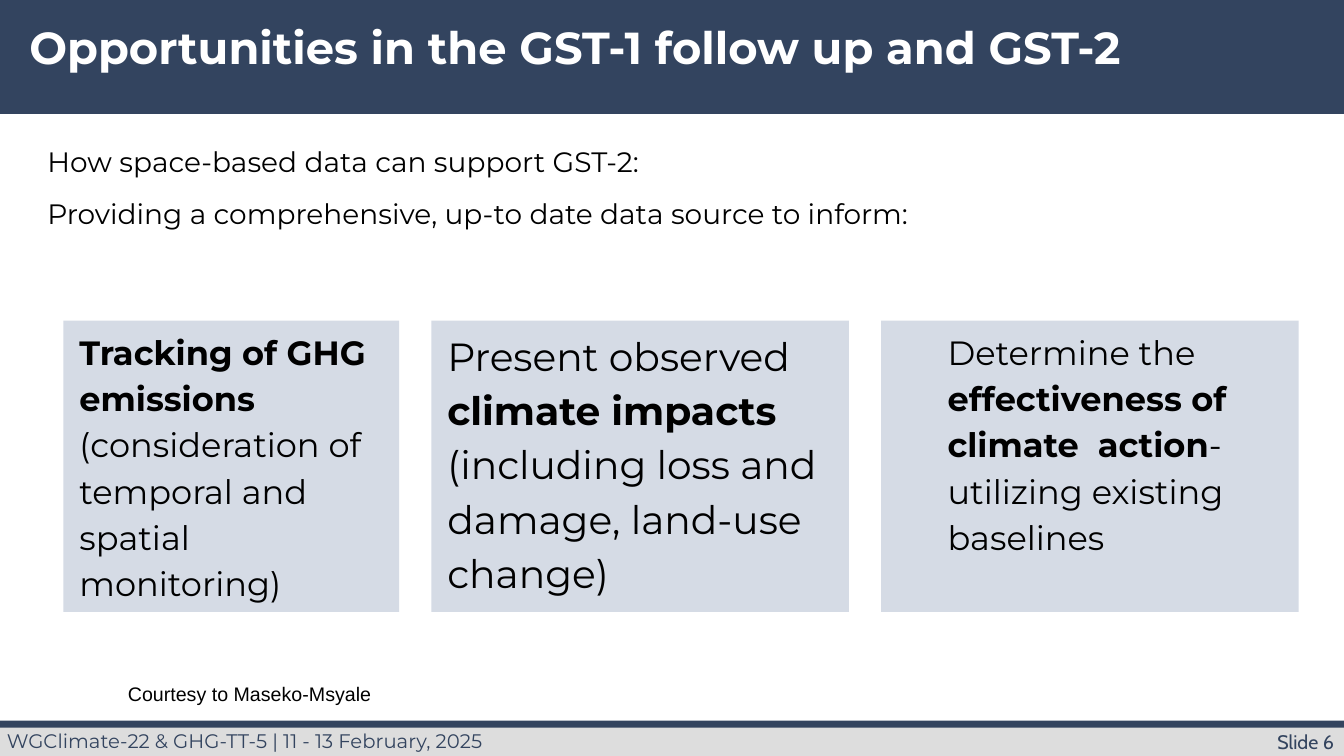
from pptx import Presentation
from pptx.dml.color import RGBColor
from pptx.enum.shapes import MSO_SHAPE as Shape
from pptx.enum.text import MSO_ANCHOR as Anchor, MSO_AUTO_SIZE as Fit, PP_ALIGN as Align
from pptx.oxml.ns import qn
from pptx.util import Inches, Pt

NAVY = RGBColor(0x33, 0x44, 0x5F)
GREY = RGBColor(0xDD, 0xDD, 0xDD)
PALE = RGBColor(0xD5, 0xDB, 0xE5)
BLACK = RGBColor(0, 0, 0)
WHITE = RGBColor(255, 255, 255)
WIDE, HIGH = 13.33, 7.5
GAP = 0.32

LINES = ["How space-based data can support GST-2:",
         "Providing a comprehensive, up-to date data source to inform:"]

# Each card: width, font size, left indent, runs of (text, bold)
CARDS = [
    (3.33, 24, 0.06, [("Tracking of GHG emissions ", True),
                      ("(consideration of temporal and spatial monitoring)", False)]),
    (4.14, 28, 0.06, [("Present observed ", False), ("climate impacts ", True),
                      ("(including loss and damage, land-use change)", False)]),
    (4.14, 24, 0.56, [("Determine the ", False),
                      ("effectiveness of climate  action", True),
                      ("- utilizing existing baselines", False)]),
]


def place(shape, box):
    shape.left, shape.top, shape.width, shape.height = map(Inches, box)


def block(slide, box, fill):
    rect = slide.shapes.add_shape(Shape.RECTANGLE, *map(Inches, box))
    rect.shadow.inherit = False
    rect.fill.solid()
    rect.fill.fore_color.rgb = fill
    rect.line.fill.background()
    return rect


def frame(shape):
    text = shape.text_frame
    text.word_wrap = True
    text.auto_size = Fit.NONE
    text.vertical_anchor = Anchor.TOP
    return text


def style(para, size, color, face="Montserrat", bold=False, align=Align.LEFT,
          space=1.0, before=0, indent=0):
    para.alignment = align
    para.line_spacing = space
    para.space_before = Pt(before)
    props = para._p.get_or_add_pPr()
    props.set("marL", str(Inches(indent)))
    props.set("indent", "0")
    props.append(props.makeelement(qn("a:buNone"), {}))
    font = para.font
    font.size, font.name, font.bold = Pt(size), face, bold
    font.color.rgb = color


def label(slide, box, words, size, color, **kw):
    text = frame(slide.shapes.add_textbox(*map(Inches, box)))
    text.text = words
    style(text.paragraphs[0], size, color, **kw)


def header(slide, box):
    left, top, width, height = box
    block(slide, box, NAVY)
    title = slide.shapes.title
    place(title, (left + 0.19, top + 0.21, width - 2.16, height - 0.28))
    # Bring the title in front of the band
    slide.shapes._spTree.append(title._element)
    text = frame(title)
    text.text = "Opportunities in the GST-1 follow up and GST-2"
    style(text.paragraphs[0], 32, WHITE, bold=True, space=0.9)


def intro(slide, box):
    body = slide.placeholders[1]
    place(body, box)
    text = frame(body)
    text.text = "\n".join(LINES)
    for row, para in enumerate(text.paragraphs):
        style(para, 20, BLACK, space=1.15, before=10 if row else 0, indent=0.06)


def cards(slide, box):
    left, top, _, height = box
    for width, size, indent, runs in CARDS:
        para = frame(block(slide, (left, top, width, height), PALE)).paragraphs[0]
        style(para, size, BLACK, space=1.15, indent=indent)
        for words, bold in runs:
            run = para.add_run()
            run.text = words
            run.font.bold = bold
        left += width + GAP


def credit(slide, box):
    label(slide, box, "Courtesy to Maseko-Msyale", 14, BLACK, face="Arial")


def footer(slide, box):
    left, top, width, height = box
    block(slide, (left, top + 0.04, width, height - 0.04), GREY)
    block(slide, (left, top, width, 0.07), NAVY)
    label(slide, (left - 0.03, top + 0.03, 6.43, 0.34),
          "WGClimate-22 & GHG-TT-5 | 11 - 13 February, 2025", 14, NAVY)
    label(slide, (width - 2.1, top + 0.04, 2.1, 0.34), "Slide 6", 14, NAVY,
          face="Cabin", align=Align.RIGHT)


def main():
    deck = Presentation()
    deck.slide_width, deck.slide_height = Inches(WIDE), Inches(HIGH)
    slide = deck.slides.add_slide(deck.slide_layouts[1])
    header(slide, (0, 0, WIDE, 1.13))
    intro(slide, (0.31, 1.33, 12.75, 1.6))
    cards(slide, (0.63, 3.18, 12.25, 2.89))
    credit(slide, (1.17, 6.72, 2.63, 0.34))
    footer(slide, (0, 7.15, WIDE, 0.35))
    deck.save("out.pptx")


if __name__ == "__main__":
    main()
